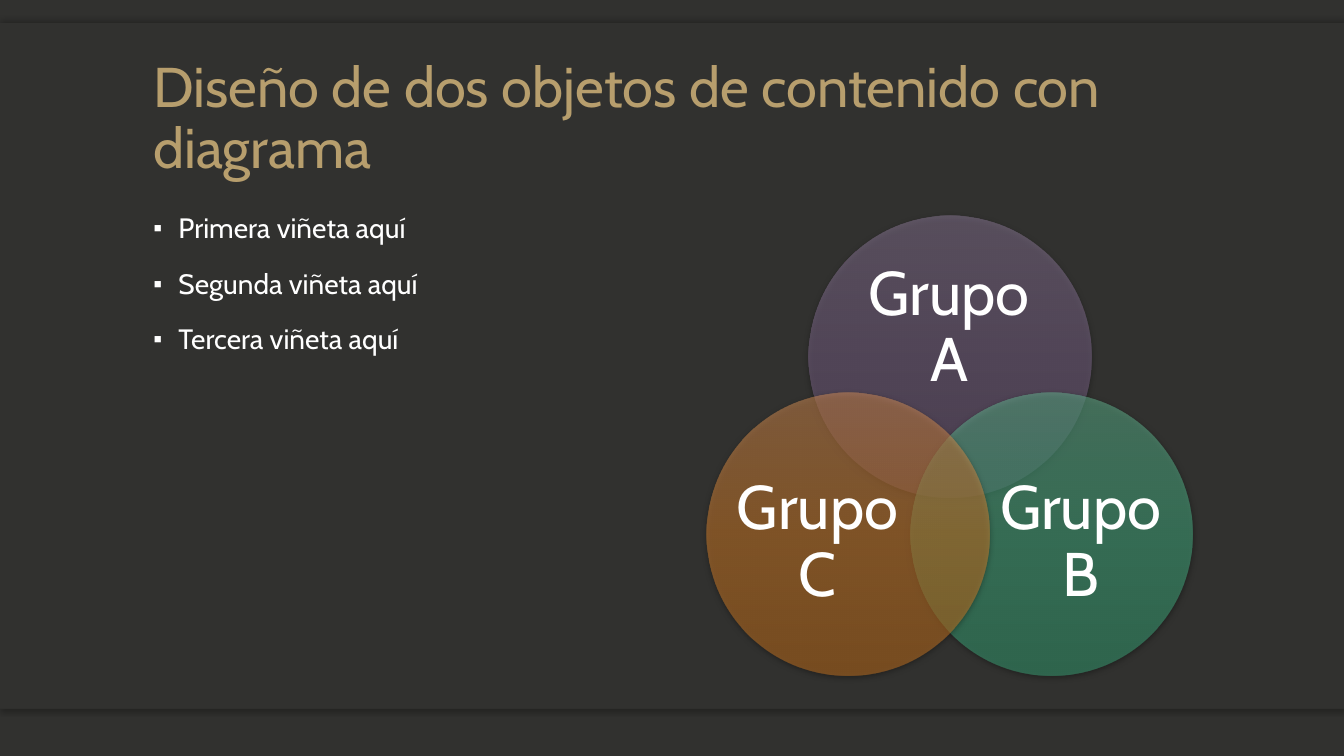
from dataclasses import dataclass
from math import cos, radians, sin

from lxml import etree
from pptx import Presentation
from pptx.dml.color import RGBColor
from pptx.enum.shapes import MSO_SHAPE
from pptx.enum.text import MSO_ANCHOR, MSO_AUTO_SIZE, PP_ALIGN
from pptx.oxml.ns import qn
from pptx.util import Emu, Pt

RECTANGLE, OVAL = MSO_SHAPE.RECTANGLE, MSO_SHAPE.OVAL
TOP, MIDDLE, BOTTOM = MSO_ANCHOR.TOP, MSO_ANCHOR.MIDDLE, MSO_ANCHOR.BOTTOM
LEFT, CENTER = PP_ALIGN.LEFT, PP_ALIGN.CENTER
NO_AUTOFIT = MSO_AUTO_SIZE.NONE

EMU_PER_PX = 9144  # 100 px to the inch
SLIDE_W, SLIDE_H = 1333, 750
FONT = "Cabin"
CHARCOAL, GOLD, WHITE, BLACK = "31312F", "B79E6D", "FFFFFF", "000000"

TITLE = "Diseño de dos objetos de contenido con diagrama"
BULLETS = ["Primera viñeta aquí", "Segunda viñeta aquí", "Tercera viñeta aquí"]

CIRCLE_SIZE = 280
VENN_X, VENN_Y, VENN_RADIUS = 942, 471, 117


@dataclass(frozen=True)
class Box:
    left: int
    top: int
    width: int
    height: int

    def emu(self) -> tuple[Emu, ...]:
        return tuple(px(v) for v in (self.left, self.top, self.width, self.height))


@dataclass(frozen=True)
class Shadow:
    opacity: int
    blur: float
    distance: float
    angle: int


@dataclass(frozen=True)
class Group:
    name: str
    gradient: tuple[str, str, str]
    label: Box  # relative to the circle's corner


@dataclass(frozen=True)
class Band:
    box: Box
    shadow: Shadow | None = None


BANDS = [
    Band(Box(0, 654, SLIDE_W, 49), Shadow(25, 4, 2, 90)),
    Band(Box(0, 23, SLIDE_W, 49), Shadow(25, 4, 2, 270)),
    Band(Box(0, 23, SLIDE_W, 680)),
]
GROUPS = [
    Group("Grupo A", ("907D9B", "826A90", "745D81"), Box(37, 49, 205, 126)),
    Group("Grupo B", ("69BB96", "4BB88A", "3DA97B"), Box(85, 72, 168, 154)),
    Group("Grupo C", ("DB945A", "DD862F", "CD7721"), Box(26, 72, 168, 154)),
]
CIRCLE_SHADOW = Shadow(63, 4.5, 1.5, 90)


def px(length: int) -> Emu:
    return Emu(length * EMU_PER_PX)


def rgb(color: str) -> RGBColor:
    return RGBColor.from_string(color)


def add_color(parent, color: str, opacity: int) -> None:
    node = etree.SubElement(parent, qn("a:srgbClr"), val=color)
    etree.SubElement(node, qn("a:alpha"), val=str(opacity * 1000))


def add_plain_shape(slide, kind, box: Box, shadow: Shadow | None):
    shape = slide.shapes.add_shape(kind, *box.emu())
    shape.line.fill.background()
    shape.shadow.inherit = False
    if shadow:
        effects = shape._element.spPr.find(qn("a:effectLst"))
        outer = etree.SubElement(
            effects, qn("a:outerShdw"), blurRad=str(Pt(shadow.blur)),
            dist=str(Pt(shadow.distance)), dir=str(shadow.angle * 60000),
            algn="ctr", rotWithShape="0")
        add_color(outer, BLACK, shadow.opacity)
    return shape


def fill_gradient(shape, colors: tuple[str, str, str]) -> None:
    """Fill from top to bottom with evenly spaced, half-transparent colours."""
    shape.fill.gradient()
    shape.fill.gradient_angle = 270
    stops = shape._element.spPr.find(qn("a:gradFill")).find(qn("a:gsLst"))
    for stop in list(stops):
        stops.remove(stop)
    for i, color in enumerate(colors):
        stop = etree.SubElement(stops, qn("a:gs"), pos=str(i * 50000))
        add_color(stop, color, 50)


def format_paragraph(paragraph, size: int, color: str, align, before: int = 0) -> None:
    paragraph.alignment = align
    paragraph.line_spacing = 0.9
    paragraph.space_before = Pt(before)
    for run in paragraph.runs:
        run.font.name = FONT
        run.font.size = Pt(size)
        run.font.color.rgb = rgb(color)


def add_bullet(paragraph) -> None:
    props = paragraph._p.get_or_add_pPr()
    props.set("marL", str(px(25)))
    props.set("indent", str(px(-25)))
    etree.SubElement(props, qn("a:buSzPct"), val="90000")
    etree.SubElement(props, qn("a:buChar"), char="▪")


def place_placeholder(slide, placeholder, box: Box, anchor):
    """Move a placeholder to its box, in front of what is drawn so far."""
    slide.shapes._spTree.append(placeholder._element)
    placeholder.left, placeholder.top, placeholder.width, placeholder.height = box.emu()
    frame = placeholder.text_frame
    frame.auto_size = NO_AUTOFIT
    frame.word_wrap = True
    frame.vertical_anchor = anchor
    return frame


def add_group(slide, group: Group, angle: float) -> None:
    left = round(VENN_X + VENN_RADIUS * sin(radians(angle)) - CIRCLE_SIZE / 2)
    top = round(VENN_Y - VENN_RADIUS * cos(radians(angle)) - CIRCLE_SIZE / 2)
    circle = add_plain_shape(
        slide, OVAL, Box(left, top, CIRCLE_SIZE, CIRCLE_SIZE), CIRCLE_SHADOW)
    fill_gradient(circle, group.gradient)

    area = group.label
    label = slide.shapes.add_textbox(
        *Box(left + area.left, top + area.top, area.width, area.height).emu())
    frame = label.text_frame
    frame.word_wrap = True
    frame.vertical_anchor = MIDDLE
    frame.margin_left = frame.margin_right = frame.margin_top = frame.margin_bottom = 0
    frame.text = group.name
    format_paragraph(frame.paragraphs[0], 44, WHITE, CENTER)


def main() -> None:
    prs = Presentation()
    prs.slide_width, prs.slide_height = px(SLIDE_W), px(SLIDE_H)
    slide = prs.slides.add_slide(prs.slide_layouts[1])
    slide.background.fill.solid()
    slide.background.fill.fore_color.rgb = rgb(CHARCOAL)

    for band in BANDS:
        shape = add_plain_shape(slide, RECTANGLE, band.box, band.shadow)
        shape.fill.solid()
        shape.fill.fore_color.rgb = rgb(CHARCOAL)

    title = place_placeholder(slide, slide.shapes.title, Box(142, 46, 1050, 138), BOTTOM)
    title.text = TITLE
    format_paragraph(title.paragraphs[0], 40, GOLD, LEFT)

    body = place_placeholder(slide, slide.placeholders[1], Box(142, 208, 500, 467), TOP)
    body.text = "\n".join(BULLETS)
    for i, paragraph in enumerate(body.paragraphs):
        add_bullet(paragraph)
        format_paragraph(paragraph, 20, WHITE, LEFT, before=18 if i else 0)

    for i, group in enumerate(GROUPS):
        add_group(slide, group, 360 * i / len(GROUPS))

    prs.save("out.pptx")


if __name__ == "__main__":
    main()
